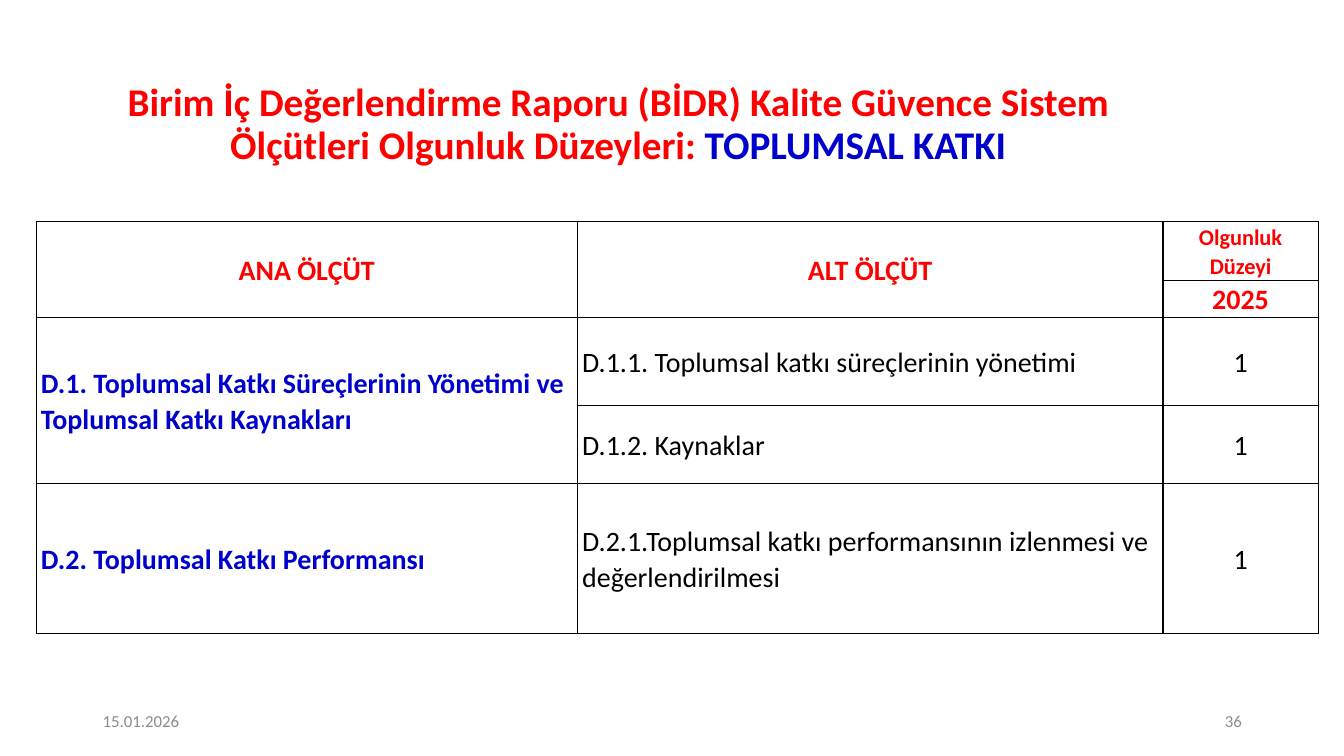
from lxml.etree import SubElement
from pptx import Presentation
from pptx.dml.color import RGBColor
from pptx.enum.text import MSO_ANCHOR, PP_ALIGN
from pptx.oxml.ns import qn
from pptx.util import Cm, Pt

COLORS = {"red": "FF0000", "blue": "0000CC", "black": "000000",
          "gray": "8C8C8C", "white": "FFFFFF"}
LEFT, CENTER, RIGHT = PP_ALIGN.LEFT, PP_ALIGN.CENTER, PP_ALIGN.RIGHT

COL_WIDTHS = [13.64, 14.76, 3.91]
ROW_HEIGHTS = [1.48, 0.93, 2.21, 1.98, 3.78]

# Cell styles: size, color, bold, alignment
STYLES = {
    "head": (20, "red", True, CENTER),
    "small": (16, "red", True, CENTER),
    "main": (20, "blue", True, LEFT),
    "sub": (20, "black", False, LEFT),
    "level": (20, "black", False, CENTER),
}

# Cells: row, column, rows spanned, style, text
CELLS = [
    (0, 0, 2, "head", "ANA ÖLÇÜT"),
    (0, 1, 2, "head", "ALT ÖLÇÜT"),
    (0, 2, 1, "small", "Olgunluk Düzeyi"),
    (1, 2, 1, "head", "2025"),
    (2, 0, 2, "main", "D.1. Toplumsal Katkı Süreçlerinin Yönetimi ve Toplumsal Katkı Kaynakları"),
    (2, 1, 1, "sub", "D.1.1. Toplumsal katkı süreçlerinin yönetimi"),
    (2, 2, 1, "level", "1"),
    (3, 1, 1, "sub", "D.1.2. Kaynaklar"),
    (3, 2, 1, "level", "1"),
    (4, 0, 1, "main", "D.2. Toplumsal Katkı Performansı"),
    (4, 1, 1, "sub", "D.2.1.Toplumsal katkı performansının izlenmesi ve değerlendirilmesi"),
    (4, 2, 1, "level", "1"),
]


def set_attrs(obj, values):
    for name, value in values.items():
        setattr(obj, name, value)


def add_run(p, text, size, color, bold=False):
    r = p.add_run()
    r.text = text
    set_attrs(r.font, {"name": "Calibri", "size": Pt(size), "bold": bold})
    r.font.color.rgb = RGBColor.from_string(COLORS[color])


def add_text(s, box, runs, align, spacing=1.0):
    sp = s.shapes.add_textbox(*[Cm(v) for v in box])
    tf = sp.text_frame
    set_attrs(tf, {"word_wrap": True, "vertical_anchor": MSO_ANCHOR.MIDDLE})
    p = tf.paragraphs[0]
    set_attrs(p, {"alignment": align, "line_spacing": spacing})
    for run in runs:
        add_run(p, *run)


def format_cell(cell):
    set_attrs(cell, {"margin_left": Cm(0.12), "margin_right": Cm(0.12),
                     "margin_top": 0, "margin_bottom": 0,
                     "vertical_anchor": MSO_ANCHOR.MIDDLE})
    # Borders come before the fill in the cell properties
    tc_pr = cell._tc.get_or_add_tcPr()
    for side in ("a:lnL", "a:lnR", "a:lnT", "a:lnB"):
        ln = SubElement(tc_pr, qn(side), w=str(Pt(1)))
        fill = SubElement(ln, qn("a:solidFill"))
        SubElement(fill, qn("a:srgbClr"), val=COLORS["black"])
    cell.fill.solid()
    cell.fill.fore_color.rgb = RGBColor.from_string(COLORS["white"])


def add_criteria_table(s, left, top):
    frame = s.shapes.add_table(len(ROW_HEIGHTS), len(COL_WIDTHS), Cm(left), Cm(top),
                               Cm(sum(COL_WIDTHS)), Cm(sum(ROW_HEIGHTS)))
    table = frame.table
    set_attrs(table, {"first_row": False, "horz_banding": False})
    for column, width in zip(table.columns, COL_WIDTHS):
        column.width = Cm(width)
    for row, height in zip(table.rows, ROW_HEIGHTS):
        row.height = Cm(height)
    for cell in table.iter_cells():
        format_cell(cell)
    for row, col, span, style, text in CELLS:
        cell = table.cell(row, col)
        if span > 1:
            cell.merge(table.cell(row + span - 1, col))
        size, color, bold, align = STYLES[style]
        p = cell.text_frame.paragraphs[0]
        set_attrs(p, {"alignment": align, "line_spacing": 1.07})
        add_run(p, text, size, color, bold)


def main():
    prs = Presentation()
    set_attrs(prs, {"slide_width": Cm(33.87), "slide_height": Cm(19.05)})
    s = prs.slides.add_slide(prs.slide_layouts[6])

    # Title
    title = "Birim İç Değerlendirme Raporu (BİDR) Kalite Güvence Sistem Ölçütleri Olgunluk Düzeyleri: "
    add_text(s, (1.32, 1.93, 28.52, 2.46),
             [(title, 28, "red", True), ("TOPLUMSAL KATKI", 28, "blue", True)], CENTER, 0.9)

    # Criteria and maturity levels
    add_criteria_table(s, 0.91, 5.59)

    # Date and slide number
    for left, text, align in ((2.34, "15.01.2026", LEFT), (23.93, "36", RIGHT)):
        add_text(s, (left, 17.65, 7.62, 1.02), [(text, 12, "gray")], align)

    prs.save("out.pptx")


if __name__ == "__main__":
    main()
